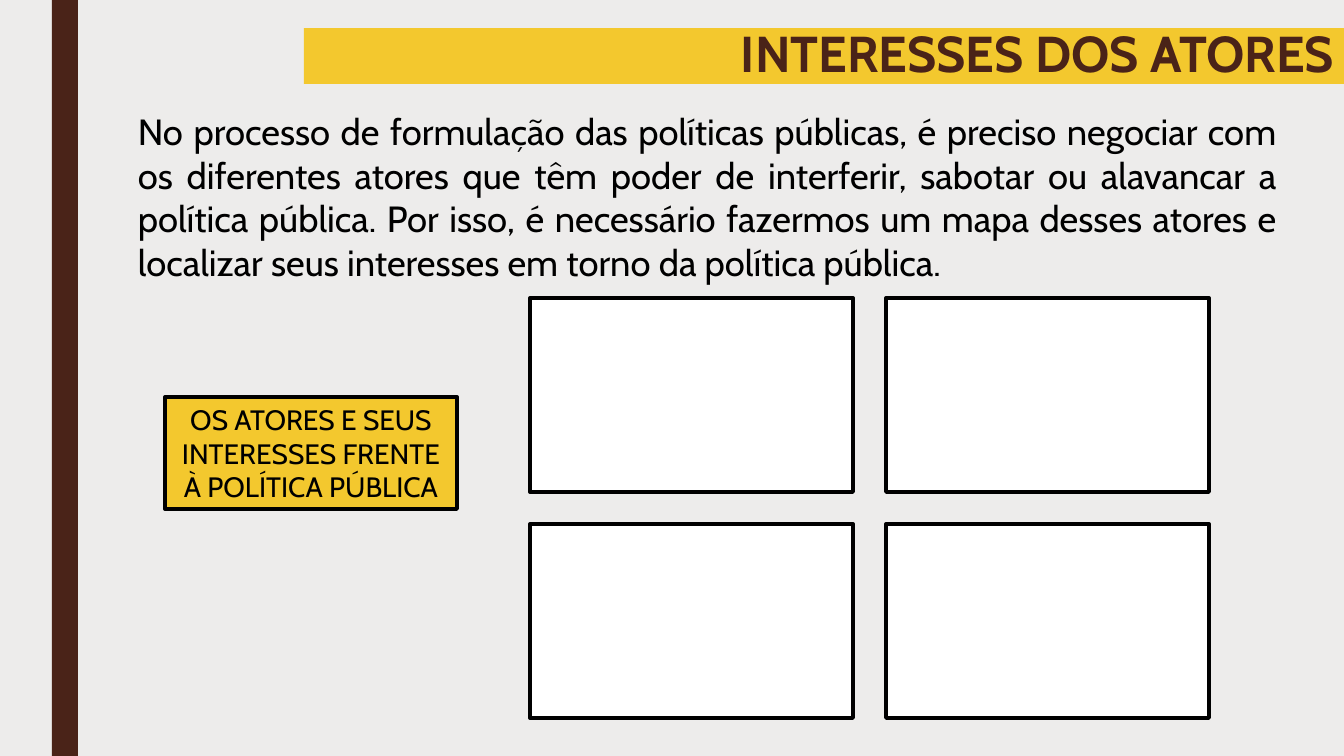
from dataclasses import dataclass

from pptx import Presentation
from pptx.dml.color import RGBColor
from pptx.enum.shapes import MSO_SHAPE
from pptx.enum.text import MSO_ANCHOR, PP_ALIGN
from pptx.shapes.autoshape import Shape
from pptx.slide import Slide
from pptx.util import Emu, Pt

RECTANGLE = MSO_SHAPE.RECTANGLE
TOP, MIDDLE = MSO_ANCHOR.TOP, MSO_ANCHOR.MIDDLE
CENTER, RIGHT, JUSTIFY = PP_ALIGN.CENTER, PP_ALIGN.RIGHT, PP_ALIGN.JUSTIFY

PX_PER_INCH = 100.8
FONT = "Cabin"
BACKGROUND, BROWN, YELLOW = "EDECEB", "4A2318", "F3C82E"
BLACK, WHITE = "000000", "FFFFFF"
BORDER_POINTS = 2.75

# Two by two grid of empty boxes for the actors
GRID_LEFT, GRID_TOP = 530, 298
BOX_WIDTH, BOX_HEIGHT = 323, 194
COLUMN_STEP, ROW_STEP = 356, 226


@dataclass(frozen=True)
class Box:
    left: int
    top: int
    width: int
    height: int
    fill: str
    bordered: bool = False


@dataclass(frozen=True)
class TextStyle:
    size: int
    color: str
    align: PP_ALIGN
    anchor: MSO_ANCHOR = MIDDLE
    bold: bool = False
    line_spacing: float = 1.0
    space_points: int = 0


def px(length: int) -> Emu:
    return Emu(round(length * 914400 / PX_PER_INCH))


def rgb(color: str) -> RGBColor:
    return RGBColor.from_string(color)


def draw_box(slide: Slide, box: Box) -> Shape:
    shape = slide.shapes.add_shape(
        RECTANGLE, px(box.left), px(box.top), px(box.width), px(box.height))
    shape.shadow.inherit = False
    shape.fill.solid()
    shape.fill.fore_color.rgb = rgb(box.fill)
    if box.bordered:
        shape.line.color.rgb = rgb(BLACK)
        shape.line.width = Pt(BORDER_POINTS)
    else:
        shape.line.fill.background()
    return shape


def write_text(shape: Shape, text: str, style: TextStyle) -> None:
    frame = shape.text_frame
    frame.word_wrap = True
    frame.vertical_anchor = style.anchor
    paragraph = frame.paragraphs[0]
    paragraph.alignment = style.align
    paragraph.line_spacing = style.line_spacing
    paragraph.space_before = paragraph.space_after = Pt(style.space_points)
    run = paragraph.add_run()
    run.text = text
    run.font.name = FONT
    run.font.size = Pt(style.size)
    run.font.bold = style.bold
    run.font.color.rgb = rgb(style.color)


def main() -> None:
    presentation = Presentation()
    presentation.slide_width, presentation.slide_height = px(1344), px(756)
    slide = presentation.slides.add_slide(presentation.slide_layouts[6])
    slide.background.fill.solid()
    slide.background.fill.fore_color.rgb = rgb(BACKGROUND)

    # Side stripe
    draw_box(slide, Box(52, 0, 26, 756, BROWN))

    # Title band
    title = draw_box(slide, Box(304, 28, 1040, 56, YELLOW))
    write_text(title, "INTERESSES DOS ATORES",
               TextStyle(36, BROWN, RIGHT, bold=True, line_spacing=0.89))

    # Introduction
    introduction = slide.shapes.add_textbox(px(128), px(104), px(1160), px(248))
    write_text(
        introduction,
        "No processo de formulação das políticas públicas, é preciso negociar "
        "com os diferentes atores que têm poder de interferir, sabotar ou "
        "alavancar a política pública. Por isso, é necessário fazermos um mapa "
        "desses atores e localizar seus interesses em torno da política pública.",
        TextStyle(26, BLACK, JUSTIFY, anchor=TOP, space_points=6))

    # Actor boxes
    for row in range(2):
        for column in range(2):
            draw_box(slide, Box(GRID_LEFT + column * COLUMN_STEP,
                                GRID_TOP + row * ROW_STEP,
                                BOX_WIDTH, BOX_HEIGHT, WHITE, bordered=True))

    # Label beside the grid
    label = draw_box(slide, Box(165, 397, 292, 112, YELLOW, bordered=True))
    write_text(label, "OS ATORES E SEUS INTERESSES FRENTE À POLÍTICA PÚBLICA",
               TextStyle(20, BLACK, CENTER))

    presentation.save("out.pptx")


if __name__ == "__main__":
    main()
